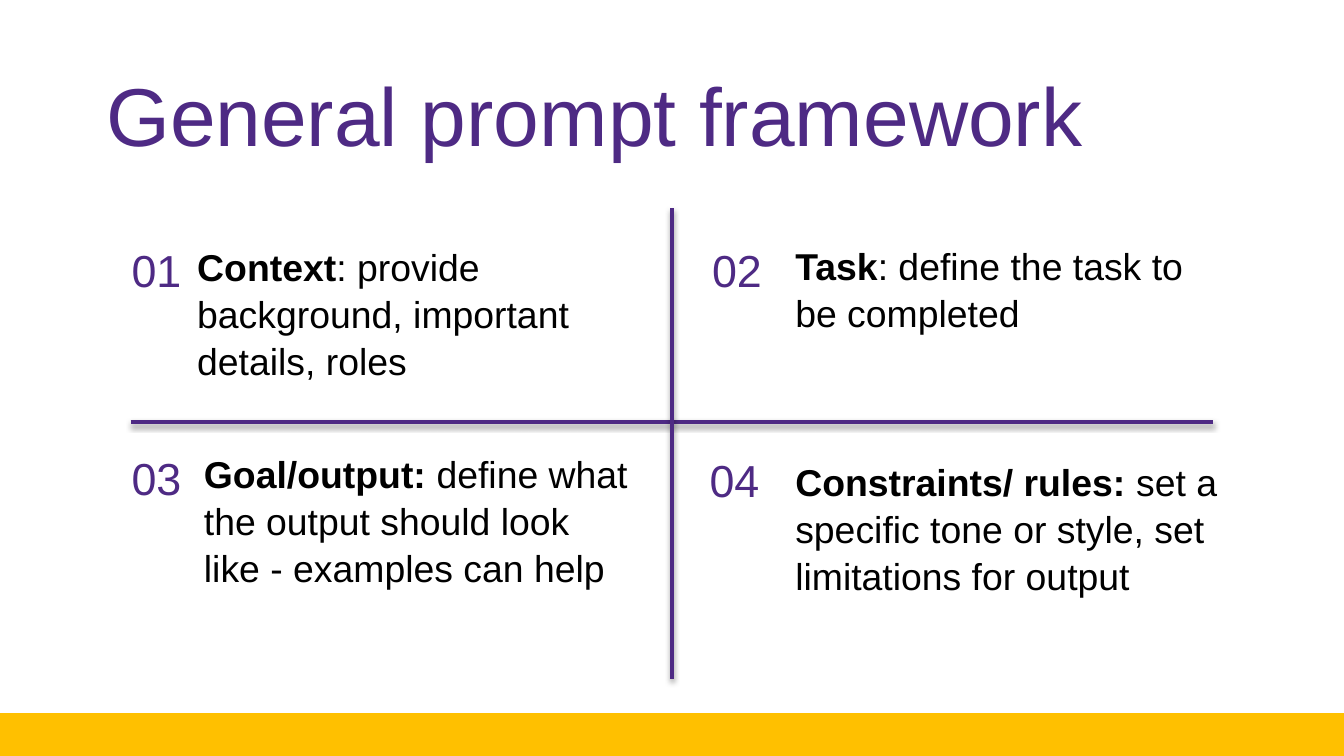
from typing import NamedTuple

from lxml import etree
from pptx import Presentation
from pptx.dml.color import RGBColor
from pptx.enum.shapes import MSO_CONNECTOR, MSO_SHAPE
from pptx.enum.text import MSO_ANCHOR, MSO_AUTO_SIZE, PP_ALIGN
from pptx.oxml.ns import qn
from pptx.util import Pt

RECT = MSO_SHAPE.RECTANGLE
STRAIGHT = MSO_CONNECTOR.STRAIGHT
LEFT = PP_ALIGN.LEFT
MIDDLE = MSO_ANCHOR.MIDDLE
FIT_SHAPE = MSO_AUTO_SIZE.SHAPE_TO_FIT_TEXT

PURPLE, GOLD, BLACK = "4E2A84", "FFC000", "000000"
TITLE_LAYOUT = 5


class Box(NamedTuple):
    x: float
    y: float
    w: float
    h: float


class Step(NamedTuple):
    number: str
    number_x: float
    number_y: float
    heading: str
    detail: str
    text_box: Box


STEPS = [
    Step("01", 63.4, 125.3, "Context", ": provide background, important details, roles",
         Box(98.6, 126, 244.8, 80)),
    Step("02", 374.4, 125.3, "Task", ": define the task to be completed",
         Box(419, 125.3, 244.8, 55.5)),
    Step("03", 63.4, 236.5, "Goal/output:",
         " define what the output should look like - examples can help",
         Box(102.2, 237.2, 244.8, 80)),
    Step("04", 373, 237.6, "Constraints/ rules: ",
         "set a specific tone or style, set limitations for output",
         Box(419, 241.2, 244.8, 80)),
]


def rgb(color: str) -> RGBColor:
    return RGBColor.from_string(color)


def place(sp, box: Box) -> None:
    sp.left, sp.top, sp.width, sp.height = map(Pt, box)


def add_run(p, text: str, *, size: float, color: str, bold: bool = False) -> None:
    r = p.add_run()
    r.text = text
    r.font.name = "Arial"
    r.font.size = Pt(size)
    r.font.bold = bold
    r.font.color.rgb = rgb(color)


def add_text_box(s, box: Box, wrap: bool = True):
    """Add a left-aligned text box and return its first paragraph."""
    tf = s.shapes.add_textbox(*map(Pt, box)).text_frame
    tf.word_wrap = wrap
    tf.auto_size = FIT_SHAPE
    p = tf.paragraphs[0]
    p.alignment = LEFT
    p.line_spacing = 1.05
    return p


def add_divider(s, x1: float, y1: float, x2: float, y2: float) -> None:
    """Add a purple line with a soft shadow below it."""
    line = s.shapes.add_connector(STRAIGHT, Pt(x1), Pt(y1), Pt(x2), Pt(y2))
    line.line.color.rgb = rgb(PURPLE)
    line.line.width = Pt(2)
    effects = etree.SubElement(line._element.spPr, qn("a:effectLst"))
    shadow = etree.SubElement(effects, qn("a:outerShdw"), blurRad=str(Pt(3.1)),
                              dist=str(Pt(1.6)), dir="5400000", rotWithShape="0")
    color = etree.SubElement(shadow, qn("a:srgbClr"), val=BLACK)
    etree.SubElement(color, qn("a:alpha"), val="38000")


def add_step(s, step: Step) -> None:
    p = add_text_box(s, Box(step.number_x, step.number_y, 41.8, 36), wrap=False)
    add_run(p, step.number, size=24, color=PURPLE)
    p = add_text_box(s, step.text_box)
    add_run(p, step.heading, size=20, color=BLACK, bold=True)
    add_run(p, step.detail, size=20, color=BLACK)


def main() -> None:
    prs = Presentation()
    prs.slide_width, prs.slide_height = Pt(720), Pt(405)
    s = prs.slides.add_slide(prs.slide_layouts[TITLE_LAYOUT])

    footer = s.shapes.add_shape(RECT, Pt(-2), Pt(382), Pt(722), Pt(23))
    footer.shadow.inherit = False
    footer.fill.solid()
    footer.fill.fore_color.rgb = rgb(GOLD)
    footer.line.fill.background()

    title = s.shapes.title
    place(title, Box(49.7, 21.6, 620.6, 78.5))
    title.text_frame.vertical_anchor = MIDDLE
    p = title.text_frame.paragraphs[0]
    p.alignment = LEFT
    add_run(p, "General prompt framework", size=44, color=PURPLE)

    add_divider(s, 70, 226, 650, 226)
    for step in STEPS:
        add_step(s, step)
    add_divider(s, 360, 111.6, 360, 363.6)

    prs.save("out.pptx")


if __name__ == "__main__":
    main()
